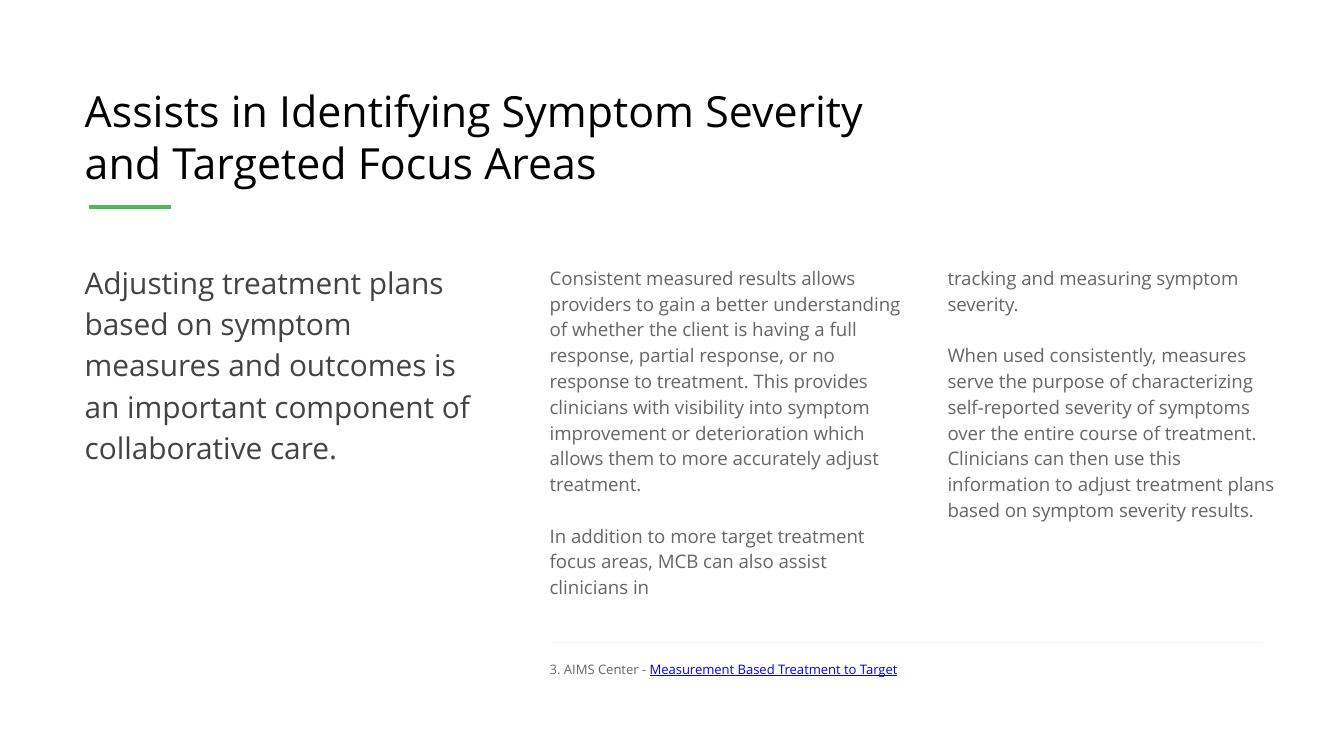
from pptx import Presentation
from pptx.dml.color import RGBColor
from pptx.enum import shapes, text
from pptx.oxml.ns import qn
from pptx.util import Inches, Pt
from lxml import etree

THEME = {
    "font": "Open Sans",
    "title": (23, "000000"),
    "lead": (16, "434343"),
    "body": (10, "666666"),
    "note": (7, "666666"),
    "link": (7, "0000FF"),
    "accent": ("4EB85C", 2.25),
    "rule": ("F3F3F3", 0.75),
}

# Content: each paragraph is a list of (style, words) runs
TITLE = [
    [("title", "Assists in Identifying Symptom Severity")],
    [("title", "and Targeted Focus Areas")],
]
LEAD = [[("lead", "Adjusting treatment plans based on symptom measures and "
          "outcomes is an important component of collaborative care.")]]
LEFT = [
    [("body", "Consistent measured results allows providers to gain a better "
      "understanding of whether the client is having a full response, partial "
      "response, or no response to treatment. This provides clinicians with "
      "visibility into symptom improvement or deterioration which allows them "
      "to more accurately adjust treatment.")],
    [("body", "In addition to more target treatment focus areas, MCB can also "
      "assist clinicians in")],
]
RIGHT = [
    [("body", "tracking and measuring symptom severity.")],
    [("body", "When used consistently, measures serve the purpose of "
      "characterizing self-reported severity of symptoms over the entire "
      "course of treatment. Clinicians can then use this information to adjust "
      "treatment plans based on symptom severity results.")],
]
NOTE = [[("note", "3. AIMS Center - "),
         ("link", "Measurement Based Treatment to Target")]]

# Layout: left, top, width, height; line spacing; gap between paragraphs
HEAD = (0.63, 0.63, 6.1, 1.17)
BOXES = [
    (LEAD, (0.63, 1.93, 3.02, 2.05), 1.15, 0),
    (LEFT, (4.09, 1.96, 2.64, 2.08), 1.15, 13.8),
    (RIGHT, (7.05, 1.96, 2.49, 2.08), 1.15, 13.8),
    (NOTE, (4.09, 4.92, 2.92, 0.14), 1, 0),
]
LINES = [("accent", 0.66, 1.27, 1.54), ("rule", 4.1, 9.4, 4.78)]


def fill(frame, paras, space=1, gap=0):
    frame.margin_left = frame.margin_right = 0
    frame.margin_top = frame.margin_bottom = 0
    frame.word_wrap = True
    frame.vertical_anchor = text.MSO_ANCHOR.TOP
    frame.auto_size = text.MSO_AUTO_SIZE.SHAPE_TO_FIT_TEXT
    for i, runs in enumerate(paras):
        para = frame.add_paragraph() if i else frame.paragraphs[0]
        para.alignment = text.PP_ALIGN.LEFT
        para.line_spacing = space
        if i and gap:
            para.space_before = Pt(gap)
        for style, words in runs:
            size, color = THEME[style]
            run = para.add_run()
            run.text = words
            run.font.name = THEME["font"]
            run.font.size = Pt(size)
            run.font.color.rgb = RGBColor.from_string(color)
            if style == "link":
                run.font.underline = True


def draw(slide, style, start, end, top):
    color, width = THEME[style]
    line = slide.shapes.add_connector(
        shapes.MSO_CONNECTOR.STRAIGHT,
        Inches(start), Inches(top), Inches(end), Inches(top))
    line.line.color.rgb = RGBColor.from_string(color)
    line.line.width = Pt(width)
    etree.SubElement(line._element.spPr, qn("a:effectLst"))


def main():
    # Widescreen page, 16 by 9
    deck = Presentation()
    deck.slide_width = Inches(10)
    deck.slide_height = deck.slide_width * 9 // 16
    slide = deck.slides.add_slide(deck.slide_layouts[5])

    # Title
    title = slide.shapes.title
    title.left, title.top, title.width, title.height = map(Inches, HEAD)
    fill(title.text_frame, TITLE)

    # Text columns and source note
    for paras, place, space, gap in BOXES:
        box = slide.shapes.add_textbox(*map(Inches, place))
        fill(box.text_frame, paras, space, gap)

    # Accent and divider
    for line in LINES:
        draw(slide, *line)

    deck.save("out.pptx")


if __name__ == "__main__":
    main()
